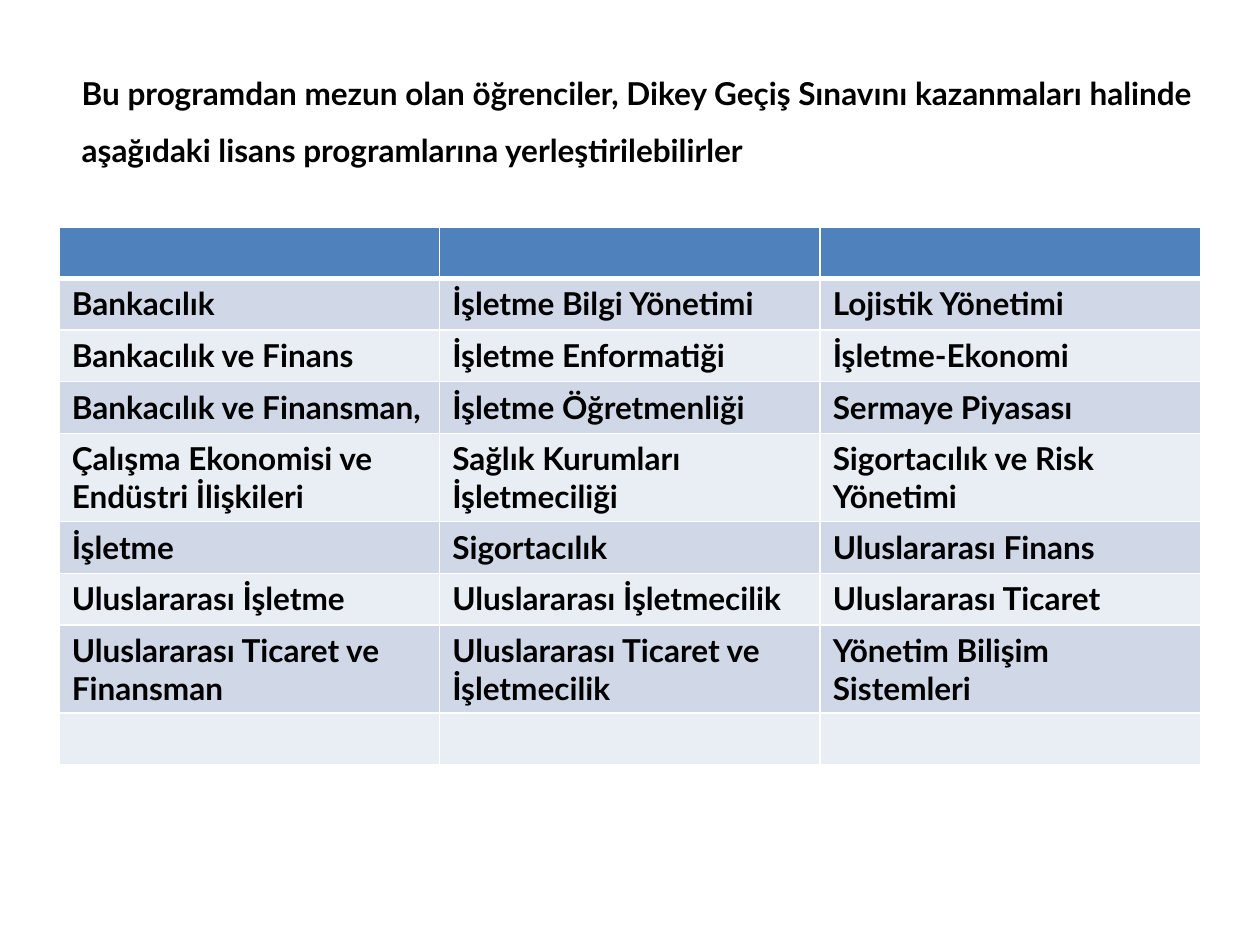
from lxml.etree import SubElement
from pptx import Presentation
from pptx.dml.color import RGBColor
from pptx.enum.text import MSO_AUTO_SIZE
from pptx.oxml.ns import qn
from pptx.util import Inches, Pt

HEADING = ("Bu programdan mezun olan öğrenciler, Dikey Geçiş Sınavını kazanmaları "
           "halinde aşağıdaki lisans programlarına yerleştirilebilirler")
EMPTY_ROW = ("", "", "")
ROWS = [
    EMPTY_ROW,
    ("Bankacılık", "İşletme Bilgi Yönetimi", "Lojistik Yönetimi"),
    ("Bankacılık ve Finans", "İşletme Enformatiği", "İşletme-Ekonomi"),
    ("Bankacılık ve Finansman,", "İşletme Öğretmenliği", "Sermaye Piyasası"),
    ("Çalışma Ekonomisi ve Endüstri İlişkileri", "Sağlık Kurumları İşletmeciliği",
     "Sigortacılık ve Risk Yönetimi"),
    ("İşletme", "Sigortacılık", "Uluslararası Finans"),
    ("Uluslararası İşletme", "Uluslararası İşletmecilik", "Uluslararası Ticaret"),
    ("Uluslararası Ticaret ve Finansman", "Uluslararası Ticaret ve İşletmecilik",
     "Yönetim Bilişim Sistemleri"),
    EMPTY_ROW,
]
COLORS = {"text": "000000", "header": "4F81BD", "odd": "D0D8E8",
          "even": "E9EDF4", "border": "FFFFFF"}
FONT = "Lato"
COLUMN_WIDTH, ROW_HEIGHT = 3.02, 0.41


def style_text(para):
    para.font.name = FONT
    para.font.size = Pt(18)
    for span in para.runs:
        span.font.name = FONT
        span.font.size = Pt(18)
        span.font.bold = True
        span.font.color.rgb = RGBColor.from_string(COLORS["text"])


def add_border(cell, side, points):
    line = SubElement(cell._tc.get_or_add_tcPr(), qn(f"a:ln{side}"), w=str(Pt(points)))
    fill = SubElement(line, qn("a:solidFill"))
    SubElement(fill, qn("a:srgbClr"), val=COLORS["border"])


def add_heading(page):
    box = page.shapes.add_textbox(Inches(0.55), Inches(0.39), Inches(9.22), Inches(1.01))
    frame = box.text_frame
    frame.word_wrap = True
    frame.auto_size = MSO_AUTO_SIZE.SHAPE_TO_FIT_TEXT
    frame.text = HEADING
    para = frame.paragraphs[0]
    para.line_spacing = 1.5
    style_text(para)


def add_program_table(page):
    row_count, column_count = len(ROWS), len(ROWS[0])
    table = page.shapes.add_table(
        row_count, column_count, Inches(0.47), Inches(1.8),
        Inches(COLUMN_WIDTH * column_count), Inches(ROW_HEIGHT * row_count)).table
    for row_index, programs in enumerate(ROWS):
        table.rows[row_index].height = Inches(ROW_HEIGHT)
        band = "header" if row_index == 0 else "odd" if row_index % 2 else "even"
        for column_index, program in enumerate(programs):
            cell = table.cell(row_index, column_index)
            cell.text = program
            style_text(cell.text_frame.paragraphs[0])
            for side in "LRTB":
                under_header = (row_index, side) in ((0, "B"), (1, "T"))
                add_border(cell, side, 3 if under_header else 1)
            cell.fill.solid()
            cell.fill.fore_color.rgb = RGBColor.from_string(COLORS[band])


def main():
    deck = Presentation()
    deck.slide_width, deck.slide_height = Inches(10), Inches(7.5)
    page = deck.slides.add_slide(deck.slide_layouts[6])
    add_heading(page)
    add_program_table(page)
    deck.save("out.pptx")


if __name__ == "__main__":
    main()
